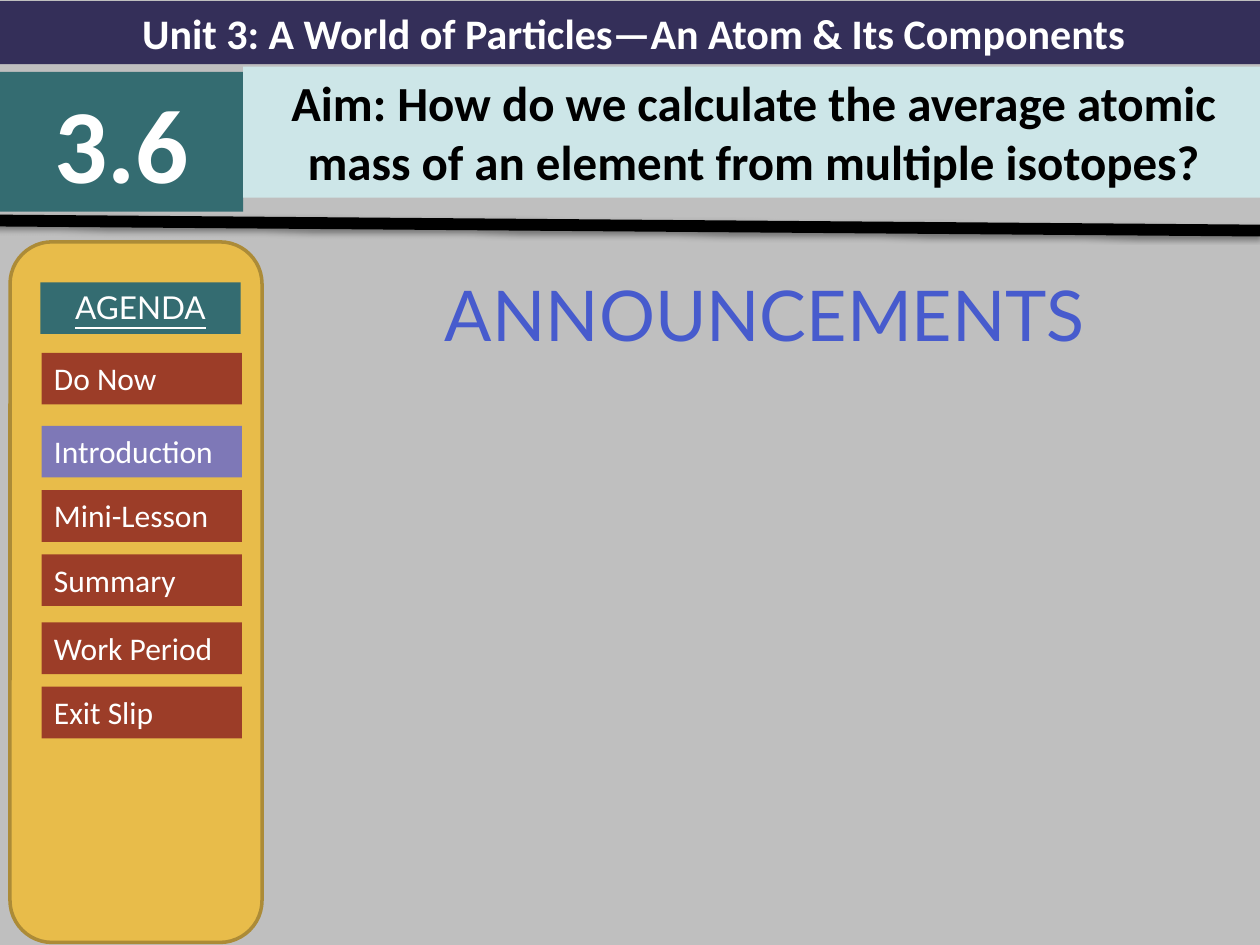
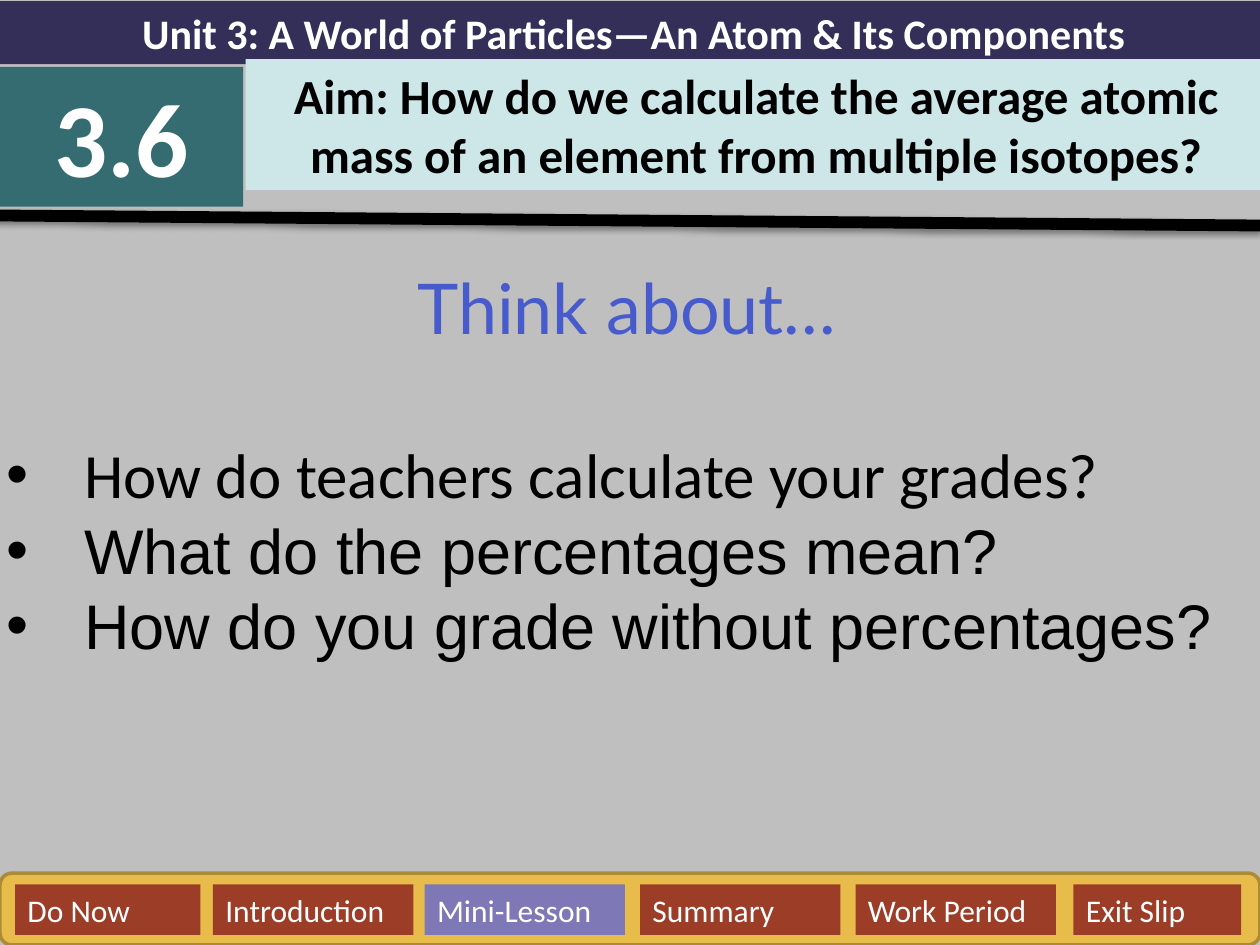
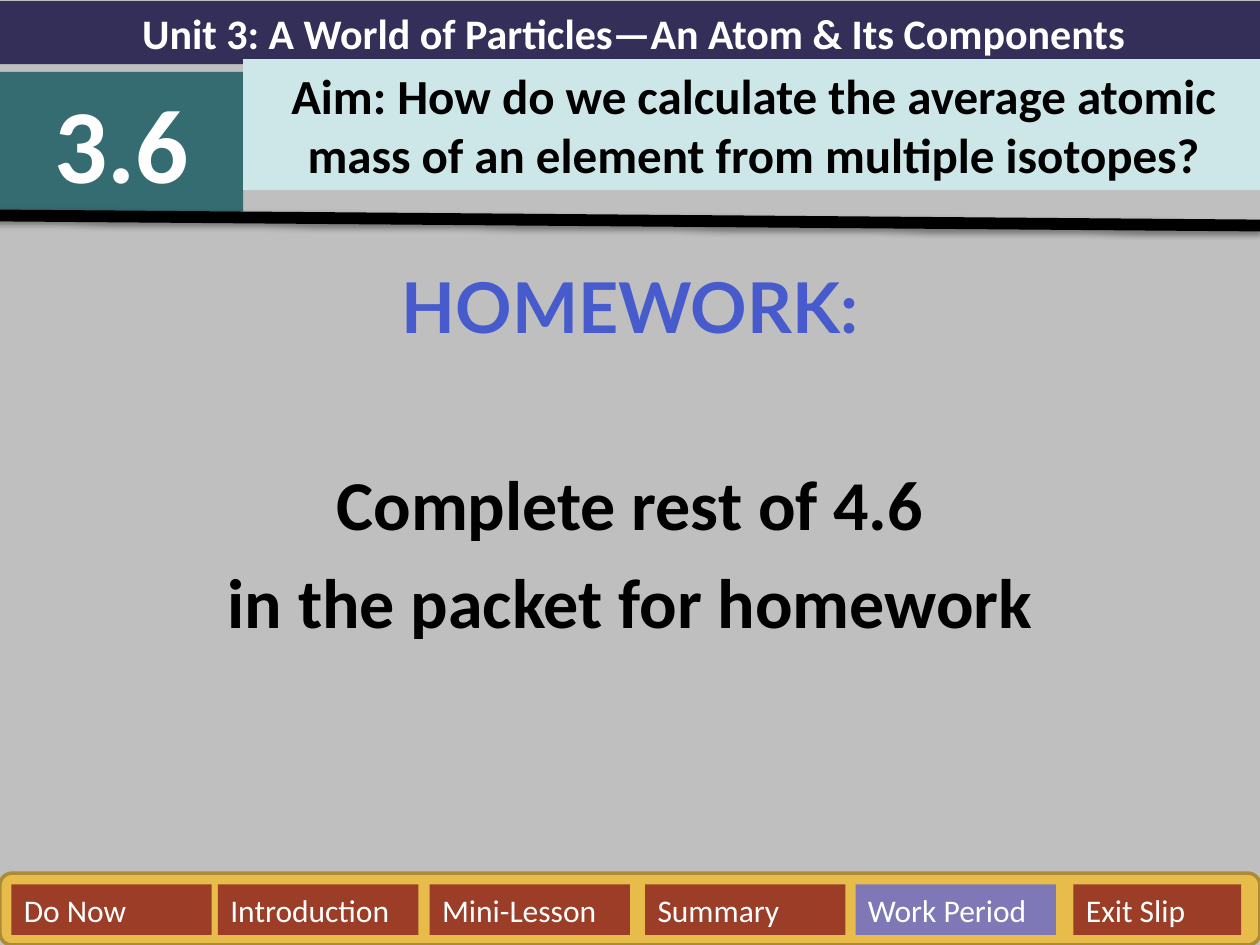
from dataclasses import dataclass

from lxml import etree
from pptx import Presentation
from pptx.dml.color import RGBColor
from pptx.enum.shapes import MSO_CONNECTOR as Connector, MSO_SHAPE as Shape
from pptx.enum.text import MSO_ANCHOR as Anchor, MSO_AUTO_SIZE as AutoSize, PP_ALIGN as Align
from pptx.oxml.ns import qn
from pptx.util import Inches, Pt

COLORS = {
    "page": "BFBFBF",
    "unit": "342F59",
    "teal": "346C71",
    "aim": "CDE6E8",
    "panel": "E8BC4A",
    "panel_edge": "AC8B37",
    "stage": "9C3D28",
    "current": "7E78B7",
    "heading": "475BCD",
    "white": "FFFFFF",
    "black": "000000",
}
COLUMNS, ROWS = 100, 75
WIDTH, HEIGHT = Inches(10), Inches(7.5)
TITLE_ONLY = 5

UNIT = "Unit 3: A World of Particles—An Atom & Its Components"
LESSON = "3.6"
AIM = "Aim: How do we calculate the average atomic mass of an element from multiple isotopes?"
STAGES = ["Do Now", "Introduction", "Mini-Lesson", "Summary", "Work Period", "Exit Slip"]

STAGE_FONT = {"name": "Calibri", "size": Pt(18)}
AGENDA_FONT = {"name": "Lato", "size": Pt(18), "underline": True}
HEADING_FONT = {"name": "Lato", "size": Pt(40)}


@dataclass
class Box:
    left: float
    top: float
    width: float
    height: float

    def inner(self, left, top, width, height):
        return Box(self.left + left, self.top + top, width, height)

    def frame(self):
        across, down = WIDTH / COLUMNS, HEIGHT / ROWS
        return (int(self.left * across), int(self.top * down),
                int(self.width * across), int(self.height * down))


PAGE = Box(0, 0, COLUMNS, ROWS)
SIDEBAR = PAGE.inner(0.8, 19.2, 20, 55.6)
FOOTER = PAGE.inner(0, 69.3, COLUMNS, 5.7)


def rgb(name):
    return RGBColor.from_string(COLORS[name])


def apply(target, values):
    for name, value in values.items():
        setattr(target, name, value)


def write(para, text, color, font, **layout):
    apply(para, layout)
    span = para.add_run()
    span.text = text
    apply(span.font, font)
    span.font.color.rgb = rgb(color)


def prepare(shape):
    apply(shape.text_frame, {"word_wrap": True, "auto_size": AutoSize.NONE,
                             "vertical_anchor": Anchor.TOP})
    return shape.text_frame


def add_panel(page, box, kind, fill, edge=None):
    panel = page.shapes.add_shape(kind, *box.frame())
    panel.shadow.inherit = False
    panel.fill.solid()
    panel.fill.fore_color.rgb = rgb(fill)
    if edge:
        panel.line.color.rgb = rgb(edge)
        panel.line.width = Pt(2)
    else:
        panel.line.fill.background()
    return panel


def add_label(page, box, fill, text, font, color="white", align=Align.CENTER):
    frame = prepare(add_panel(page, box, Shape.RECTANGLE, fill))
    write(frame.paragraphs[0], text, color, font, alignment=align)


def add_rule(page, top):
    left, start, width, drop = PAGE.inner(-0.5, top, 100.5, 0.8).frame()
    rule = page.shapes.add_connector(Connector.STRAIGHT, left, start, left + width, start + drop)
    rule.line.color.rgb = rgb("black")
    rule.line.width = Pt(6.75)
    effects = etree.SubElement(rule._element.spPr, qn("a:effectLst"))
    shadow = etree.SubElement(effects, qn("a:outerShdw"), blurRad=str(Pt(3.1)),
                              dist=str(Pt(1.6)), dir="5400000", rotWithShape="0")
    tint = etree.SubElement(shadow, qn("a:srgbClr"), val=COLORS["black"])
    etree.SubElement(tint, qn("a:alpha"), val="38000")


def add_header(page, lesson_top, aim_left, aim_top, rule_top):
    bold = {"name": "Calibri", "bold": True}
    add_label(page, PAGE.inner(0, 0.1, 100.6, 5), "unit", UNIT, {**bold, "size": Pt(24)})
    add_label(page, PAGE.inner(0, lesson_top, 19.3, 11.1), "teal", LESSON, {**bold, "size": Pt(60)})
    add_label(page, PAGE.inner(aim_left, aim_top, 81, 10.4), "aim", AIM,
              {**bold, "size": Pt(28)}, "black")
    add_rule(page, rule_top)


def add_stages(page, boxes, current):
    for stage, box in zip(STAGES, boxes):
        fill = "current" if stage == current else "stage"
        add_label(page, box, fill, stage, STAGE_FONT, align=Align.LEFT)


def add_sidebar(page, box, current):
    add_panel(page, box, Shape.ROUNDED_RECTANGLE, "panel", "panel_edge")
    add_label(page, box.inner(2.4, 3.2, 15.9, 4.1), "teal", "AGENDA", AGENDA_FONT)
    tops = [8.8, 14.6, 19.7, 24.8, 30.2, 35.3]
    add_stages(page, [box.inner(2.5, top, 15.9, 4.1) for top in tops], current)


def add_footer(page, box, current, lefts, first_width):
    add_panel(page, box, Shape.ROUNDED_RECTANGLE, "panel", "panel_edge")
    widths = [first_width, *[15.9] * 4, 13.3]
    add_stages(page, [box.inner(left, 0.9, width, 4)
                      for left, width in zip(lefts, widths)], current)


def add_heading(page, box, text, bold=False, spacing=1.0):
    title = page.shapes.title
    apply(title, dict(zip(("left", "top", "width", "height"), box.frame())))
    write(prepare(title).paragraphs[0], text, "heading", {**HEADING_FONT, "bold": bold},
          alignment=Align.CENTER, line_spacing=spacing)


def add_body(page, box, lines, **layout):
    frame = prepare(page.shapes.add_textbox(*box.frame()))
    for index, (text, font) in enumerate(lines):
        para = frame.add_paragraph() if index else frame.paragraphs[0]
        write(para, text, "black", font, **layout)
    return frame


def add_bullets(frame, indent):
    for para in frame.paragraphs:
        properties = para._p.get_or_add_pPr()
        properties.set("marL", str(indent))
        properties.set("indent", str(-indent))
        etree.SubElement(properties, qn("a:buFont"), typeface="Arial")
        etree.SubElement(properties, qn("a:buChar"), char="•")


def build_announcements(page):
    add_heading(page, PAGE.inner(20.8, 20.4, 79.8, 9), "ANNOUNCEMENTS", spacing=1.1)
    add_header(page, lesson_top=5.7, aim_left=19.3, aim_top=5.3, rule_top=17.5)
    add_sidebar(page, SIDEBAR, "Introduction")


def build_questions(page):
    add_heading(page, PAGE.inner(-0.5, 20.5, 100.5, 9), "Think about…")
    add_header(page, lesson_top=5.3, aim_left=19.5, aim_top=4.7, rule_top=17.1)
    add_footer(page, FOOTER, "Mini-Lesson", [1.2, 16.9, 33.7, 50.8, 67.9, 85.2], 14.7)
    calibri, arial = ({"name": name, "size": Pt(36)} for name in ("Calibri", "Arial"))
    questions = [
        ("How do teachers calculate your grades?", calibri),
        ("What do the percentages mean?", arial),
        ("How do you grade without percentages?", arial),
    ]
    add_bullets(add_body(page, PAGE.inner(-0.5, 34.1, 100.5, 20), questions), Inches(0.62))


def build_homework(page):
    add_heading(page, PAGE.inner(0, 20.4, 100, 9), "HOMEWORK:", bold=True)
    add_header(page, lesson_top=5.7, aim_left=19.3, aim_top=4.7, rule_top=17.1)
    add_footer(page, FOOTER, "Work Period", [0.9, 17.3, 34.1, 51.2, 67.9, 85.2], 15.9)
    font = {"name": "Calibri", "size": Pt(40), "bold": True}
    lines = [(text, font) for text in ("Complete rest of 4.6", "in the packet for homework")]
    add_body(page, PAGE.inner(0, 36.1, 100, 17), lines,
             alignment=Align.CENTER, space_before=Pt(8))


def main():
    deck = Presentation()
    apply(deck, {"slide_width": WIDTH, "slide_height": HEIGHT})
    backdrop = deck.slide_master.background.fill
    backdrop.solid()
    backdrop.fore_color.rgb = rgb("page")
    for build in (build_announcements, build_questions, build_homework):
        build(deck.slides.add_slide(deck.slide_layouts[TITLE_ONLY]))
    deck.save("out.pptx")


if __name__ == "__main__":
    main()
